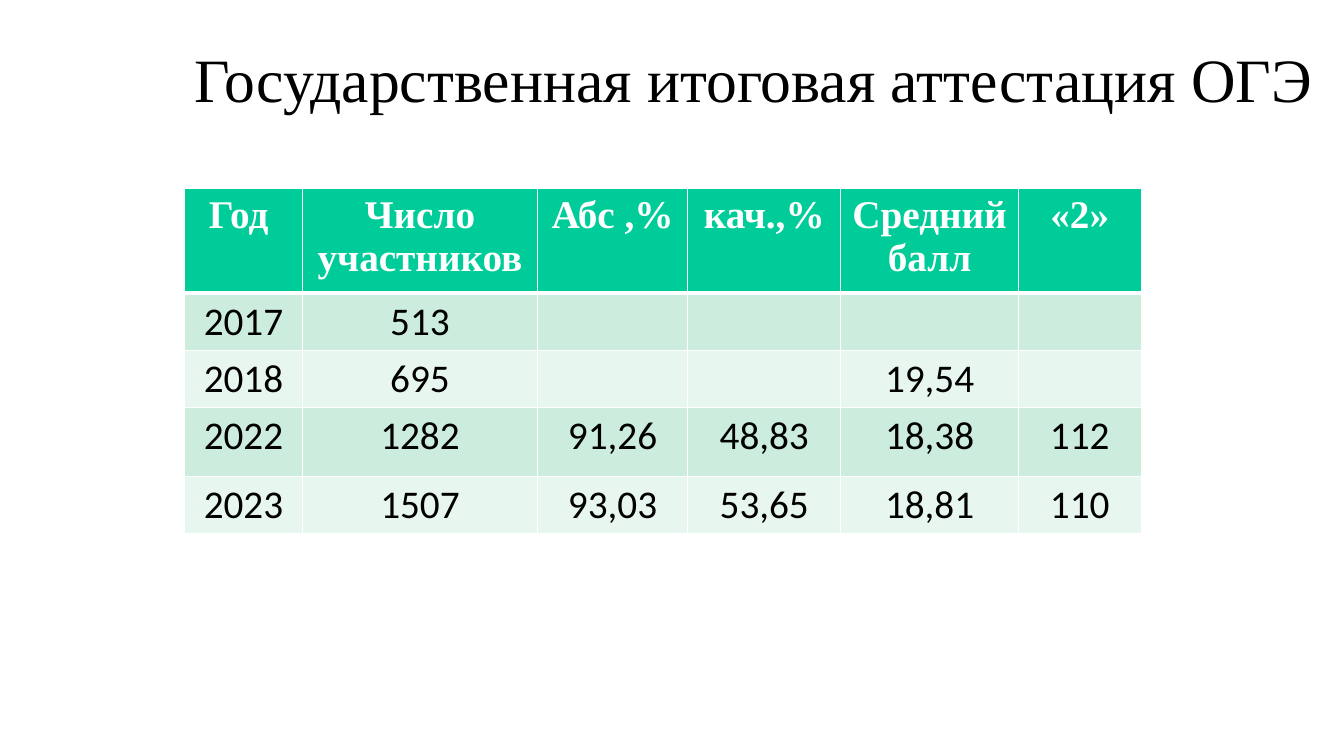
"""Build the slide with the state exam results table."""
from lxml import etree
from pptx import Presentation, util as u
from pptx.dml.color import RGBColor
from pptx.enum import text
from pptx.oxml import ns

WIDTH, HEIGHT = u.Inches(13.33), u.Inches(7.5)
BLACK = RGBColor(0x00, 0x00, 0x00)
WHITE = RGBColor(0xFF, 0xFF, 0xFF)
GREEN = RGBColor(0x00, 0xCC, 0x99)
BANDS = RGBColor(0xCC, 0xEC, 0xDE), RGBColor(0xE7, 0xF6, 0xEF)
SERIF, SANS = "Times New Roman", "Calibri"

LEFT = 13.73
COLUMNS = 8.78, 17.48, 11.18, 11.4, 13.2, 9.15
ROWS = 13.73, 7.6, 7.6, 9.07, 7.6
RESULTS = [
    ["Год ", "Число участников", "Абс ,%", "кач.,%", "Средний балл", "«2»"],
    ["2017", "513", "", "", "", ""],
    ["2018", "695", "", "", "19,54", ""],
    ["2022", "1282", "91,26", "48,83", "18,38", "112"],
    ["2023", "1507", "93,03", "53,65", "18,81", "110"],
]


def across(percent):
    """Return a share of the slide's width."""
    return int(WIDTH * percent / 100)


def down(percent):
    """Return a share of the slide's height."""
    return int(HEIGHT * percent / 100)


def style(p, name, size, color, bold=False):
    """Format every run of a paragraph."""
    for r in p.runs:
        r.font.name, r.font.size, r.font.bold = name, u.Pt(size), bold
        r.font.color.rgb = color


def add_title(s, words):
    """Add the slide heading."""
    sp = s.shapes.add_textbox(across(LEFT), down(1.2), across(100 - LEFT), down(19.33))
    tf = sp.text_frame
    tf.word_wrap = True
    tf.vertical_anchor = text.MSO_ANCHOR.MIDDLE
    tf.text = words
    p = tf.paragraphs[0]
    p.line_spacing = 0.9
    style(p, SERIF, 44, BLACK)


def set_border(cell, side, points):
    """Draw one white edge of a cell."""
    tc_pr = cell._tc.get_or_add_tcPr()
    ln = etree.SubElement(tc_pr, ns.qn(f"a:ln{side}"), w=str(u.Pt(points)))
    fill = etree.SubElement(ln, ns.qn("a:solidFill"))
    etree.SubElement(fill, ns.qn("a:srgbClr"), val=str(WHITE))


def fill_cell(cell, words, row):
    """Write and format one table cell."""
    header = row == 0
    for side in "LRTB":
        thick = (row, side) in ((0, "B"), (1, "T"))
        set_border(cell, side, 3 if thick else 1)
    cell.fill.solid()
    cell.fill.fore_color.rgb = GREEN if header else BANDS[(row - 1) % 2]
    cell.text_frame.text = words
    p = cell.text_frame.paragraphs[0]
    p.alignment = text.PP_ALIGN.CENTER
    style(p, SERIF if header else SANS, 28, WHITE if header else BLACK, header)


def add_results(s):
    """Add the results table."""
    table = s.shapes.add_table(
        len(ROWS), len(COLUMNS), across(LEFT), down(24.93),
        across(sum(COLUMNS)), down(sum(ROWS))).table
    for column, share in zip(table.columns, COLUMNS):
        column.width = across(share)
    for i, (share, words) in enumerate(zip(ROWS, RESULTS)):
        table.rows[i].height = down(share)
        for j, word in enumerate(words):
            fill_cell(table.cell(i, j), word, i)


def main():
    """Create and save the presentation."""
    prs = Presentation()
    prs.slide_width, prs.slide_height = WIDTH, HEIGHT
    s = prs.slides.add_slide(prs.slide_layouts[6])
    add_title(s, "Государственная итоговая аттестация ОГЭ")
    add_results(s)
    prs.save("out.pptx")


if __name__ == "__main__":
    main()
